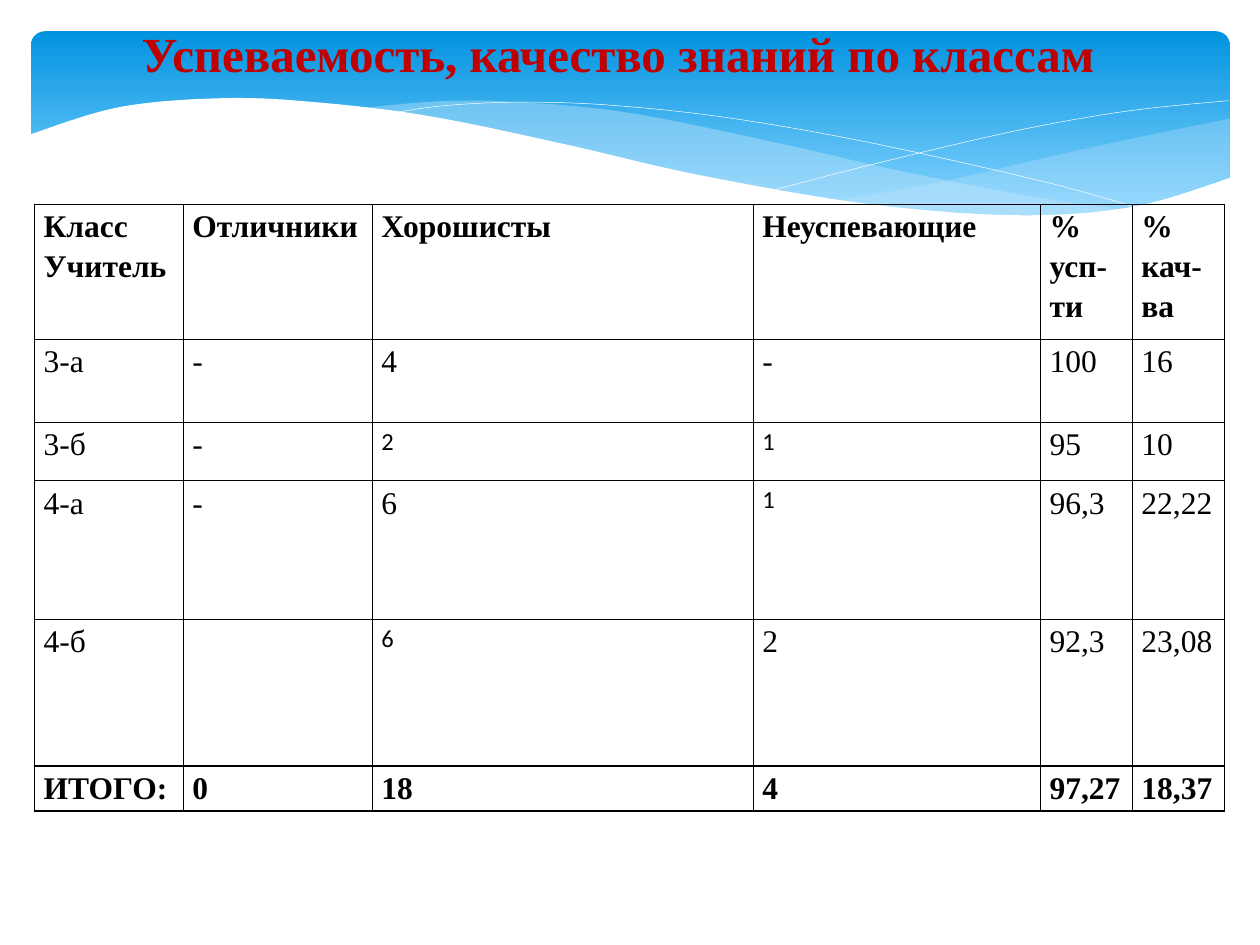
from lxml import etree
from pptx import Presentation, util as u
from pptx.dml.color import RGBColor
from pptx.enum import shapes, text
from pptx.oxml import ns, parse_xml

THEME = {
    "top": "0293E0", "low": "83D3FE", "wave": "C6E7FC", "white": "FFFFFF",
    "title": "C00000", "ink": "000000",
    "serif": "Times New Roman", "sans": "Calibri",
    "head": 28, "body": 18, "small": 14,
}
STEPS = 12  # short lines between two knots of a curve


def style(run, size, face, tint, bold):
    font = run.font
    font.size, font.name, font.bold = u.Pt(THEME[size]), THEME[face], bold
    font.color.rgb = RGBColor.from_string(THEME[tint])


def curve(knots):
    """Catmull-Rom spline: a smooth line through all knots."""
    ends = [knots[0], *knots, knots[-1]]
    points = [knots[0]]
    for quad in zip(ends, ends[1:], ends[2:], ends[3:]):
        for step in range(1, STEPS + 1):
            t = step / STEPS
            points.append(tuple(
                b + t / 2 * (c - a + t * (2 * a - 5 * b + 4 * c - d
                                          + t * (3 * (b - c) + d - a)))
                for a, b, c, d in zip(*quad)))
    return points


deck = Presentation()
deck.slide_width, deck.slide_height = u.Cm(25.4), u.Cm(19.05)
slide = deck.slides.add_slide(deck.slide_layouts[5])

# Gradient banner
band = slide.shapes.add_shape(shapes.MSO_SHAPE.ROUNDED_RECTANGLE,
                              u.Cm(0.63), u.Cm(0.63), u.Cm(24.16), u.Cm(3.96))
band.adjustments[0] = 0.07
band.shadow.inherit = False
band.line.fill.background()
band.fill.gradient()
band.fill.gradient_angle = 270
for stop, tint, place in zip(band.fill.gradient_stops, ("top", "low"), (0, 0.9)):
    stop.color.rgb = RGBColor.from_string(THEME[tint])
    stop.position = place

# Waves from back to front: fill, opacity in percent, and edges.
# Each edge is a smooth curve through knots (x, y) in centimetres;
# a wave without fill is a thin open line.
waves = [
    ("wave", 29, [  # right wave: crest, then trough
        [(24.79, 2.39), (21.87, 3), (19.13, 3.63), (16.79, 4.06)],
        [(16.79, 4.06), (18.26, 4.24), (20.12, 4.37), (22.58, 4.22),
         (24.79, 3.58)]]),
    ("wave", 40, [  # middle wave: crest, then trough
        [(22.68, 4.24), (20.5, 3.91), (17.93, 3.4), (15.98, 2.95),
         (13.06, 2.34), (11.23, 2.11), (9.17, 2.03), (7.26, 2.18)],
        [(7.26, 2.18), (9.19, 2.46), (11.4, 2.95), (14.38, 3.63),
         (17.65, 4.19), (20.22, 4.39), (22.68, 4.24)]]),
    (None, 100, [  # falling line
        [(7.85, 2.29), (8.97, 2.13), (10.57, 2.06), (12.42, 2.13),
         (14.78, 2.39), (17.65, 2.9), (21.11, 3.68), (23.04, 4.22)]]),
    (None, 100, [  # rising line
        [(15.57, 3.84), (17.65, 3.3), (20.47, 2.64), (22.73, 2.24),
         (24.77, 2.03)]]),
    ("white", 100, [  # front wave: crest, then straight base
        [(24.82, 3.58), (22.83, 4.17), (20.5, 4.34), (17.48, 4.11),
         (14.1, 3.53), (11.35, 2.9), (8.64, 2.34), (6.35, 2.06),
         (4.5, 1.98), (2.41, 2.16), (0.58, 2.72)],
        [(0.58, 5.69), (24.82, 5.69)]]),
]
for tint, alpha, edges in waves:
    spots = [(u.Cm(x), u.Cm(y)) for edge in edges for x, y in curve(edge)]
    pen = slide.shapes.build_freeform(*spots[0])
    pen.add_line_segments(spots[1:], close=tint is not None)
    wave = pen.convert_to_shape()
    wave.shadow.inherit = False
    if tint is None:
        wave.fill.background()
        wave.line.color.rgb = RGBColor.from_string(THEME["white"])
        wave.line.width = u.Cm(0.01)
        continue
    wave.line.fill.background()
    wave.fill.solid()
    wave.fill.fore_color.rgb = RGBColor.from_string(THEME[tint])
    if alpha < 100:
        color = wave.element.spPr.find(".//" + ns.qn("a:srgbClr"))
        etree.SubElement(color, ns.qn("a:alpha"), val=str(alpha * 1000))

# Title, brought in front of the banner
title = slide.shapes.title
title.element.getparent().append(title.element)
title.left, title.top = u.Cm(2.5), u.Cm(0.35)
title.width, title.height = u.Cm(19.91), u.Cm(1.45)
frame = title.text_frame
frame.text = "Успеваемость, качество знаний по классам"
frame.word_wrap = False
frame.auto_size = text.MSO_AUTO_SIZE.SHAPE_TO_FIT_TEXT
frame.vertical_anchor = text.MSO_ANCHOR.MIDDLE
frame.paragraphs[0].alignment = text.PP_ALIGN.CENTER
style(frame.paragraphs[0].runs[0], "head", "serif", "title", True)

# Results table: header, one row for each class, totals
rows = [
    ["Класс\nУчитель", "Отличники", "Хорошисты", "Неуспевающие",
     "% усп-ти", "%\nкач-ва"],
    ["3-а", "-", "4", "-", "100", "16"],
    ["3-б", "-", "2", "1", "95", "10"],
    ["4-а", "-", "6", "1", "96,3", "22,22"],
    ["4-б", "", "6", "2", "92,3", "23,08"],
    ["ИТОГО:", "0", "18", "4", "97,27", "18,37"],
]
widths = [3, 3.81, 7.68, 5.79, 1.85, 1.85]
heights = [2.72, 1.68, 1.17, 2.8, 2.95, 0.91]
minor = {(2, 2), (2, 3), (3, 3), (4, 2)}  # (row, column) in small type
strong = {0, len(rows) - 1}  # bold rows
grid = slide.shapes.add_table(len(rows), len(widths), u.Cm(0.7), u.Cm(4.12),
                              u.Cm(sum(widths)), u.Cm(sum(heights))).table
grid.first_row = grid.horz_banding = False
for col, width in zip(grid.columns, widths):
    col.width = u.Cm(width)
for row, height in zip(grid.rows, heights):
    row.height = u.Cm(height)

for r, row in enumerate(rows):
    for c, words in enumerate(row):
        cell = grid.cell(r, c)
        cell.margin_left = cell.margin_right = u.Cm(0.18)
        cell.margin_top = cell.margin_bottom = u.Cm(0)
        cell.text_frame.text = words
        size, face = ("small", "sans") if (r, c) in minor else ("body", "serif")
        for para in cell.text_frame.paragraphs:
            para.line_spacing = 1.15
            for run in para.runs:
                style(run, size, face, "ink", r in strong)
        # Borders come before the fill in the cell's properties
        props = cell._tc.get_or_add_tcPr()
        for side in "LRTB":
            props.append(parse_xml(
                f'<a:ln{side} {ns.nsdecls("a")} w="{u.Pt(1)}"><a:solidFill>'
                f'<a:srgbClr val="{THEME["ink"]}"/></a:solidFill></a:ln{side}>'))
        cell.fill.background()

deck.save("out.pptx")
